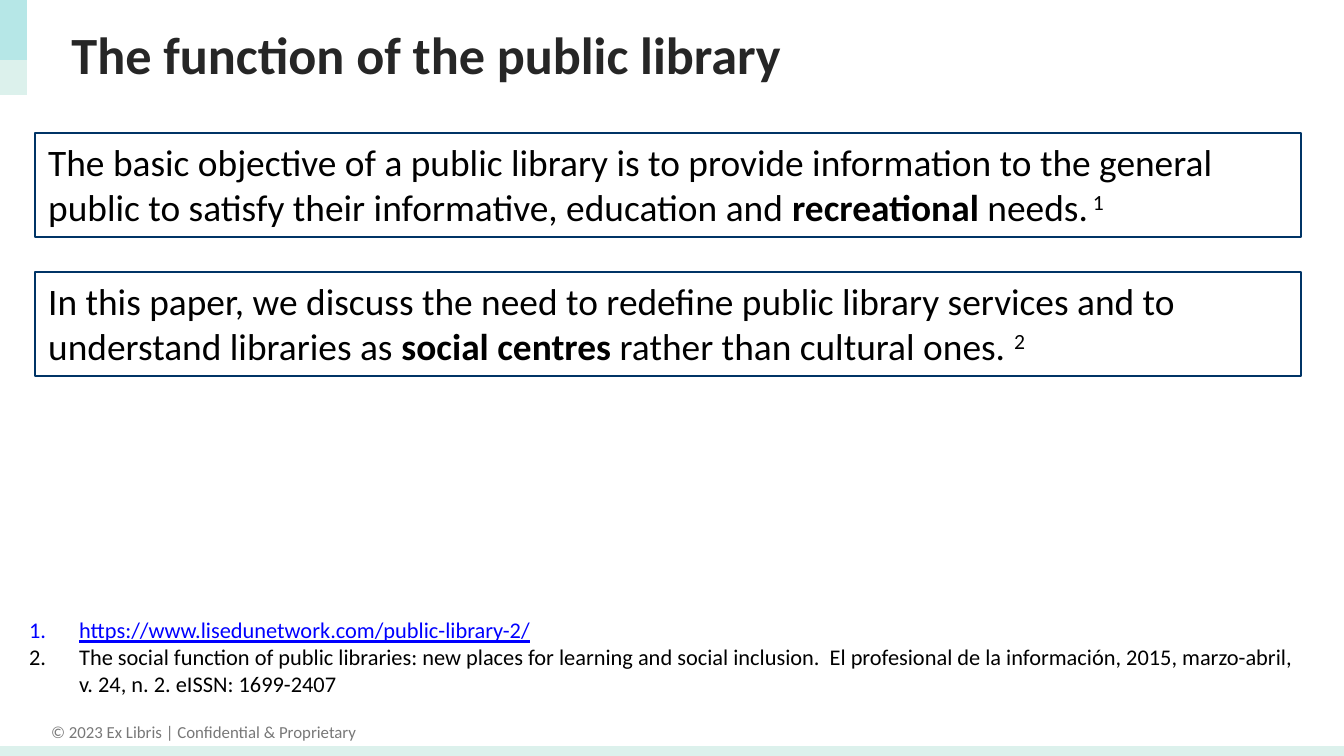
import pptx
import pptx.util
import pptx.dml.color
import pptx.enum.shapes
import pptx.enum.text
import pptx.oxml
import pptx.oxml.ns

RGBColor = pptx.dml.color.RGBColor
Anchor = pptx.enum.text.MSO_ANCHOR
Align = pptx.enum.text.PP_ALIGN
AutoSize = pptx.enum.text.MSO_AUTO_SIZE

MINT = RGBColor(0xDC, 0xF1, 0xEC)
TURQUOISE = RGBColor(0x50, 0xCF, 0xDA)
NAVY = RGBColor(0x00, 0x34, 0x66)
CHARCOAL = RGBColor(0x26, 0x26, 0x26)
GRAY = RGBColor(0x78, 0x78, 0x78)
LINK_BLUE = RGBColor(0x00, 0x00, 0xFF)
BLACK = RGBColor(0x00, 0x00, 0x00)

FONT = "Calibri"
SLIDE_WIDTH, SLIDE_HEIGHT = 1344, 756
EMU_PER_PX = 9144000 / SLIDE_WIDTH

STATEMENTS = [
    [("The basic objective of a public library is to provide information to the "
      "general public to satisfy their informative, education and ", {}),
     ("recreational", {"bold": True}),
     (" needs.", {}),
     (" 1", {"superscript": True})],
    [("In this paper, we discuss the need to redefine public library services and "
      "to understand libraries as ", {}),
     ("social centres ", {"bold": True}),
     ("rather than cultural ones. ", {}),
     ("2", {"superscript": True})],
]
REFERENCES = [
    ("https://www.lisedunetwork.com/public-library-2/",
     {"color": LINK_BLUE, "underline": True}),
    ("The social function of public libraries: new places for learning and social "
     "inclusion.  El profesional de la información, 2015, marzo-abril, v. 24, n. 2. "
     "eISSN: 1699-2407", {}),
]


def px(length):
    return pptx.util.Emu(round(length * EMU_PER_PX))


def box_emu(box):
    return [px(length) for length in box]


def add_text(paragraph, text, size=12, color=BLACK, bold=False, underline=False,
             superscript=False):
    run = paragraph.add_run()
    run.text = text
    run.font.name = FONT
    run.font.size = pptx.util.Pt(size)
    run.font.bold = bold
    run.font.underline = underline
    run.font.color.rgb = color
    if superscript:
        run.font._element.set("baseline", "30000")


def add_rectangle(slide, box, fill=None, alpha=None, line=None):
    """Add a rectangle; alpha is the fill's opacity in percent."""
    shape = slide.shapes.add_shape(
        pptx.enum.shapes.MSO_SHAPE.RECTANGLE, *box_emu(box))
    shape.shadow.inherit = False
    if fill is None:
        shape.fill.background()
    else:
        shape.fill.solid()
        shape.fill.fore_color.rgb = fill
    if alpha is not None:
        color = shape._element.spPr.find(".//" + pptx.oxml.ns.qn("a:srgbClr"))
        color.append(pptx.oxml.parse_xml(
            f'<a:alpha {pptx.oxml.ns.nsdecls("a")} val="{alpha * 1000}"/>'))
    if line is None:
        shape.line.fill.background()
    else:
        shape.line.color.rgb = line
        shape.line.width = pptx.util.Pt(0.75)
    return shape


def add_corner_accent(slide, box):
    left, top, width, height = box
    add_rectangle(slide, box, fill=MINT)
    add_rectangle(slide, (left, top, width, height - 35), fill=TURQUOISE, alpha=27)


def add_footer(slide, box):
    left, top, width, height = box
    add_rectangle(slide, (left, top + height - 10, width, 10), fill=MINT)
    notice = slide.shapes.add_textbox(*box_emu((left + 36, top, 335, 34)))
    notice.text_frame.word_wrap = False
    paragraph = notice.text_frame.paragraphs[0]
    paragraph.alignment = Align.CENTER
    add_text(paragraph, "© 2023 Ex Libris | Confidential & Proprietary",
             size=9, color=GRAY)


def place_title(slide, box):
    title = slide.shapes.title
    title.left, title.top, title.width, title.height = box_emu(box)
    frame = title.text_frame
    frame.auto_size = AutoSize.NONE
    frame.vertical_anchor = Anchor.MIDDLE
    paragraph = frame.paragraphs[0]
    paragraph.alignment = Align.LEFT
    add_text(paragraph, "The function of the public library",
             size=28, color=CHARCOAL, bold=True)


def add_statements(slide, box, gap=35):
    """Stack the framed statements evenly in the box."""
    left, top, width, height = box
    count = len(STATEMENTS)
    row_height = (height - gap * (count - 1)) / count
    for index, pieces in enumerate(STATEMENTS):
        row_top = top + index * (row_height + gap)
        shape = add_rectangle(slide, (left, row_top, width, row_height), line=NAVY)
        frame = shape.text_frame
        frame.word_wrap = True
        frame.vertical_anchor = Anchor.TOP
        paragraph = frame.paragraphs[0]
        paragraph.alignment = Align.LEFT
        for text, style in pieces:
            add_text(paragraph, text, size=20, **style)


def number_paragraph(paragraph, indent):
    properties = paragraph._p.get_or_add_pPr()
    properties.set("marL", str(px(indent)))
    properties.set("indent", str(-px(indent)))
    properties.append(pptx.oxml.parse_xml(
        f'<a:buAutoNum {pptx.oxml.ns.nsdecls("a")} type="arabicPeriod"/>'))


def add_references(slide, box):
    frame = slide.shapes.add_textbox(*box_emu(box)).text_frame
    frame.word_wrap = True
    for index, (text, style) in enumerate(REFERENCES):
        paragraph = frame.add_paragraph() if index else frame.paragraphs[0]
        number_paragraph(paragraph, indent=50)
        add_text(paragraph, text, **style)


def main():
    presentation = pptx.Presentation()
    presentation.slide_width = px(SLIDE_WIDTH)
    presentation.slide_height = px(SLIDE_HEIGHT)
    slide = presentation.slides.add_slide(presentation.slide_layouts[5])

    add_footer(slide, (0, 715, SLIDE_WIDTH, 41))
    add_corner_accent(slide, (0, 0, 27, 95))
    place_title(slide, (58, 11, 1238, 85))
    add_references(slide, (16, 610, 1308, 95))
    add_statements(slide, (35, 133, 1266, 243))
    presentation.save("out.pptx")


if __name__ == "__main__":
    main()
